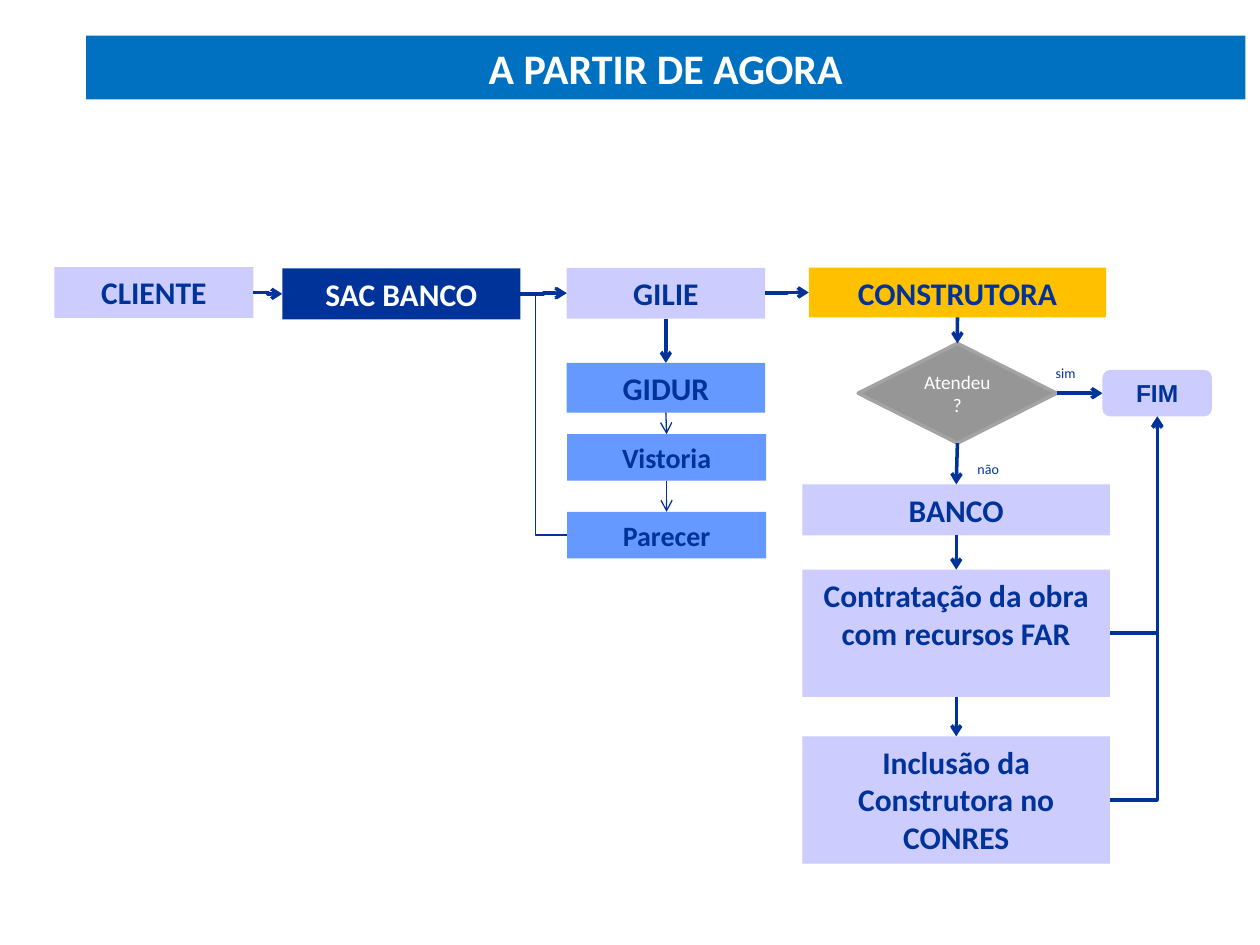
from dataclasses import dataclass

import pptx
import pptx.dml.color
import pptx.enum.shapes
import pptx.enum.text
import pptx.oxml
import pptx.oxml.ns
import pptx.util

Pt = pptx.util.Pt
Shape = pptx.enum.shapes.MSO_SHAPE
Connector = pptx.enum.shapes.MSO_CONNECTOR
Anchor = pptx.enum.text.MSO_ANCHOR
Align = pptx.enum.text.PP_ALIGN

NAVY, WHITE, LILAC, BLUE = "003399", "FFFFFF", "CCCCFF", "6699FF"
TOP, LEFT, BOTTOM, RIGHT = range(4)


@dataclass
class Step:
    text: str
    left: float
    top: float
    width: float
    height: float
    fill: str = LILAC
    size: float = 18
    color: str = NAVY
    bold: bool = True
    font: str = "Calibri"
    kind: Shape = Shape.RECTANGLE
    border: str = ""
    anchor: Anchor = Anchor.TOP


@dataclass
class Link:
    start: str
    start_side: int
    end: str
    end_side: int
    preset: str = "line"
    weight: float = 2
    adjust: int = 0


STEPS = {
    "client": Step("CLIENTE", 31, 152.6, 113.8, 29.1),
    "service": Step("SAC BANCO", 161.3, 153.4, 136.1, 29.1, NAVY, color=WHITE),
    "gilie": Step("GILIE", 323.8, 153, 113.4, 29.1),
    "builder": Step("CONSTRUTORA", 462.2, 153, 169.9, 28.4, "FFC000"),
    "gidur": Step("GIDUR", 323.8, 207.4, 113.4, 28.4, BLUE),
    "survey": Step("Vistoria", 324, 248.1, 113.8, 26.6, BLUE, 16),
    "opinion": Step("Parecer", 324, 292.5, 113.8, 26.6, BLUE, 16),
    "decision": Step("Atendeu ?", 490.4, 196.2, 113.4, 57, "969696", 11, WHITE, False,
                     kind=Shape.FLOWCHART_DECISION, border="A3A3A3", anchor=Anchor.MIDDLE),
    "finish": Step("FIM", 630, 211.4, 62.6, 26.6, size=14, font="Arial",
                   kind=Shape.FLOWCHART_ALTERNATE_PROCESS),
    "bank": Step("BANCO", 458.6, 276.8, 175.7, 29.1),
    "contract": Step("Contratação da obra com recursos FAR", 458.6, 325.5, 175.7, 72.7),
    "register": Step("Inclusão da Construtora no CONRES", 458.6, 420.8, 175.7, 72.7),
}

LINKS = [
    Link("client", RIGHT, "service", LEFT, "bentConnector3"),
    Link("service", RIGHT, "gilie", LEFT, "bentConnector3"),
    Link("gilie", RIGHT, "builder", LEFT, "bentConnector3"),
    Link("decision", RIGHT, "finish", LEFT, "bentConnector3"),
    Link("contract", RIGHT, "finish", BOTTOM, "bentConnector2"),
    Link("register", RIGHT, "finish", BOTTOM, "bentConnector2"),
    Link("gilie", BOTTOM, "gidur", TOP),
    Link("gidur", BOTTOM, "survey", TOP, weight=0.75),
    Link("survey", BOTTOM, "opinion", TOP, weight=0.75),
    Link("opinion", LEFT, "gilie", LEFT, "bentConnector3", 0.75, 9000000),
    Link("builder", BOTTOM, "decision", TOP),
    Link("decision", BOTTOM, "bank", TOP),
    Link("bank", BOTTOM, "contract", TOP),
    Link("contract", BOTTOM, "register", TOP),
]


def paint(target, color: str) -> None:
    target.solid()
    target.fore_color.rgb = pptx.dml.color.RGBColor.from_string(color)


def write(shape, text: str, size: float, color: str, bold: bool = True,
          font: str = "Calibri", align: Align = Align.CENTER,
          anchor: Anchor = Anchor.TOP) -> None:
    frame = shape.text_frame
    frame.word_wrap = True
    frame.auto_size = pptx.enum.text.MSO_AUTO_SIZE.NONE
    frame.vertical_anchor = anchor
    frame.text = text
    para = frame.paragraphs[0]
    para.alignment = align
    para.font.name, para.font.size, para.font.bold = font, Pt(size), bold
    paint(para.font.fill, color)


def add_step(page, step: Step):
    box = page.shapes.add_shape(step.kind, Pt(step.left), Pt(step.top),
                                Pt(step.width), Pt(step.height))
    box.shadow.inherit = False
    paint(box.fill, step.fill)
    if step.border:
        paint(box.line.fill, step.border)
        box.line.width = Pt(2)
    else:
        box.line.fill.background()
    write(box, step.text, step.size, step.color, step.bold, step.font, anchor=step.anchor)
    return box


def add_link(page, link: Link, boxes: dict) -> None:
    kind = Connector.STRAIGHT if link.preset == "line" else Connector.ELBOW
    line = page.shapes.add_connector(kind, 0, 0, 0, 0)
    line.begin_connect(boxes[link.start], link.start_side)
    line.end_connect(boxes[link.end], link.end_side)
    paint(line.line.fill, NAVY)
    line.line.width = Pt(link.weight)
    properties = line._element.spPr
    geometry = properties.find(pptx.oxml.ns.qn("a:prstGeom"))
    geometry.set("prst", link.preset)
    if link.adjust:
        guide = pptx.oxml.parse_xml(
            f'<a:gd {pptx.oxml.ns.nsdecls("a")} name="adj1" fmla="val {link.adjust}"/>')
        geometry.get_or_add_avLst().append(guide)
    for parent, tag in ((line.line._get_or_add_ln(), 'tailEnd type="arrow"'),
                        (properties, "effectLst")):
        name, _, attributes = tag.partition(" ")
        parent.append(pptx.oxml.parse_xml(
            f'<a:{name} {pptx.oxml.ns.nsdecls("a")} {attributes}/>'))


def add_label(page, text: str, left: float, top: float) -> None:
    box = page.shapes.add_textbox(Pt(left), Pt(top), Pt(28), Pt(17))
    write(box, text, 8, NAVY, False, align=Align.LEFT)


def main() -> None:
    deck = pptx.Presentation()
    deck.slide_width, deck.slide_height = Pt(720), Pt(540)
    page = deck.slides.add_slide(deck.slide_layouts[5])
    title = page.shapes.title
    title.left, title.top, title.width, title.height = Pt(49.2), Pt(20.4), Pt(662.4), Pt(36.4)
    paint(title.fill, "0070C0")
    write(title, "A PARTIR DE AGORA", 24, WHITE)
    boxes = {name: add_step(page, step) for name, step in STEPS.items()}
    for link in LINKS:
        add_link(page, link, boxes)
    add_label(page, "sim", 596.2, 204.5)
    add_label(page, "não", 551.5, 259.9)
    deck.save("out.pptx")


if __name__ == "__main__":
    main()
